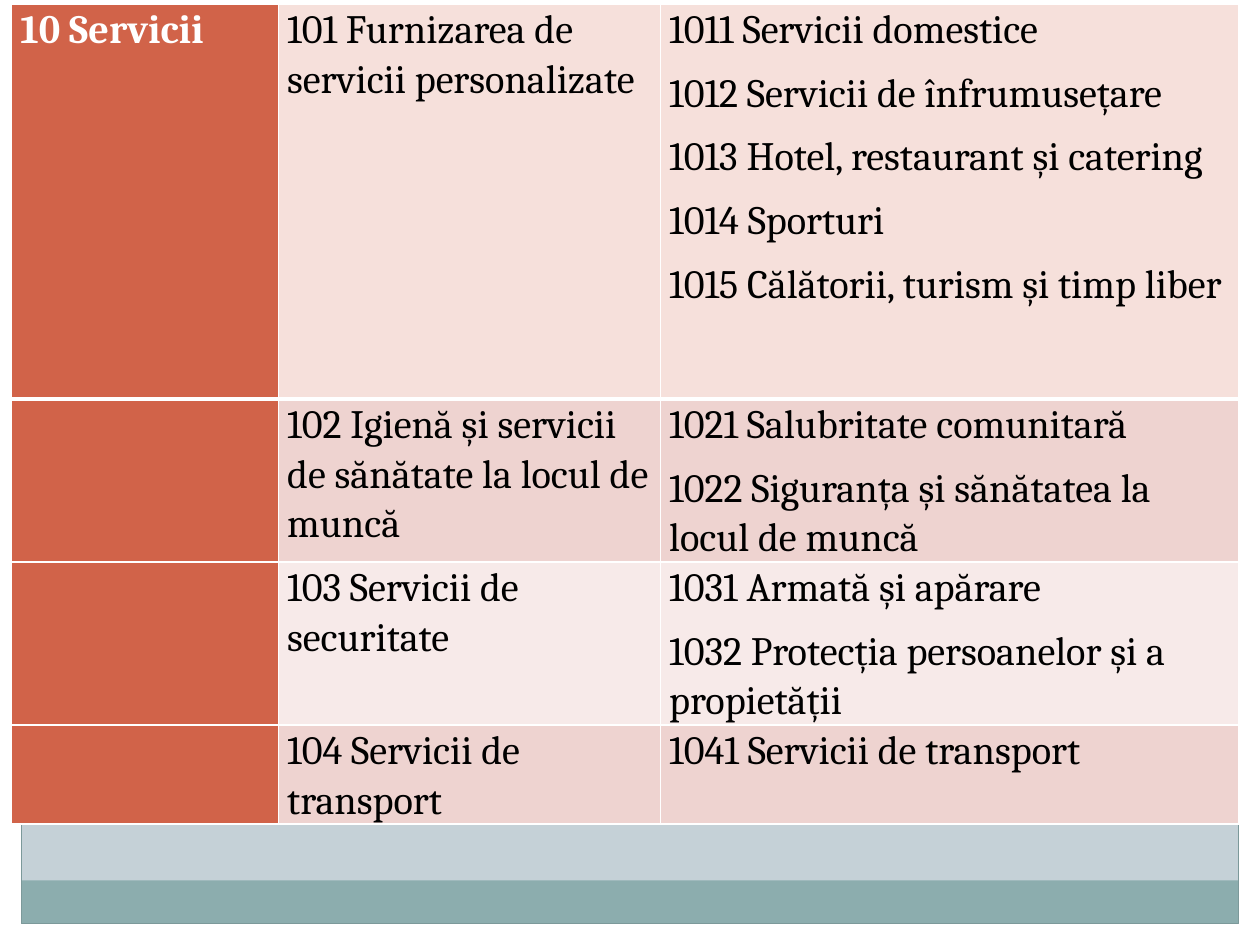
from lxml.etree import SubElement
from pptx import Presentation
from pptx.dml.color import RGBColor
from pptx.enum.shapes import MSO_SHAPE as Shape
from pptx.oxml.ns import qn
from pptx.util import Cm, Pt

COLORS = {
    "background": "C5D1D7", "white": "FFFFFF", "black": "000000",
    "teal": "8CADAE", "frame": "7C999A", "orange": "D16349",
    "peach": "F6E0DB", "rose": "EED3D0", "blush": "F7EAE9",
}
WIDTH, HEIGHT = 25.4, 19.05
MARGIN = 0.43
COLUMNS = [5.38, 7.7, 11.66]
ROWS = [
    (7.96, "peach", "10 Servicii", ["101 Furnizarea de servicii personalizate"],
     ["1011 Servicii domestice", "1012 Servicii de înfrumusețare",
      "1013 Hotel, restaurant și catering", "1014 Sporturi",
      "1015 Călătorii, turism și timp liber"]),
    (3.28, "rose", "", ["102 Igienă și servicii de sănătate la locul de muncă"],
     ["1021 Salubritate comunitară", "1022 Siguranța și sănătatea la locul de muncă"]),
    (3.28, "blush", "", ["103 Servicii de securitate"],
     ["1031 Armată și apărare", "1032 Protecția persoanelor și a propietății"]),
    (2, "rose", "", ["104 Servicii de transport"], ["1041 Servicii de transport"]),
]


def color(name):
    """Return the named colour."""
    return RGBColor.from_string(COLORS[name])


def add_rectangle(page, box, fill=None, line=None):
    """Draw a plain rectangle in a box given in centimetres."""
    shape = page.shapes.add_shape(Shape.RECTANGLE, *map(Cm, box))
    shape.shadow.inherit = False
    if fill:
        shape.fill.solid()
        shape.fill.fore_color.rgb = color(fill)
    else:
        shape.fill.background()
    if line:
        shape.line.color.rgb = color(line)
        shape.line.width = Pt(0.75)
    else:
        shape.line.fill.background()


def add_backdrop(page, box):
    """Draw the white margins, the footer band and the thin frame."""
    left, top, width, height = box
    right, bottom = left + width - MARGIN, top + height - MARGIN
    inner_width, inner_height = width - 2 * MARGIN, height - 2 * MARGIN
    for margin in [(left, bottom, width, MARGIN), (left, top, width, 3.86),
                   (left, top, MARGIN, height), (right, top, MARGIN, height)]:
        add_rectangle(page, margin, "white")
    add_rectangle(page, (left + MARGIN, bottom - 0.87, inner_width, 0.87), "teal")
    add_rectangle(page, (left + MARGIN, top + MARGIN, inner_width, inner_height),
                  line="frame")


def set_borders(cell, bottom_width):
    """Give a cell white borders with the chosen bottom width."""
    properties = cell._tc.get_or_add_tcPr()
    for side, width in (("L", 1), ("R", 1), ("T", 1), ("B", bottom_width)):
        line = SubElement(properties, qn(f"a:ln{side}"), w=str(Pt(width)))
        fill = SubElement(line, qn("a:solidFill"))
        SubElement(fill, qn("a:srgbClr"), val=COLORS["white"])


def fill_cell(cell, lines, fill, ink, bold, bottom_width):
    """Write the lines into a cell and style it."""
    set_borders(cell, bottom_width)
    cell.fill.solid()
    cell.fill.fore_color.rgb = color(fill)
    cell.margin_left = cell.margin_right = Cm(0.18)
    cell.margin_top = cell.margin_bottom = 0
    cell.text = "\n".join(lines)
    for para in cell.text_frame.paragraphs:
        para.line_spacing = 1.07
        para.space_after = Pt(8)
        para.font.size = Pt(23)
        for span in para.runs:
            span.font.name = "Cambria"
            span.font.size = Pt(23)
            span.font.bold = bold
            span.font.color.rgb = color(ink)


def add_services_table(page, box):
    """Place the table of services in the given box."""
    table = page.shapes.add_table(len(ROWS), len(COLUMNS), *map(Cm, box)).table
    for column, width in zip(table.columns, COLUMNS):
        column.width = Cm(width)
    for index, (height, fill, domain, group, fields) in enumerate(ROWS):
        row = table.rows[index]
        row.height = Cm(height)
        bottom_width = 3 if index == 0 else 1
        fill_cell(row.cells[0], [domain], "orange", "white", True, bottom_width)
        for cell, lines in zip(list(row.cells)[1:], (group, fields)):
            fill_cell(cell, lines, fill, "black", False, bottom_width)


def main():
    """Build the deck and save it."""
    deck = Presentation()
    deck.slide_width, deck.slide_height = Cm(WIDTH), Cm(HEIGHT)
    page = deck.slides.add_slide(deck.slide_layouts[6])
    page.background.fill.solid()
    page.background.fill.fore_color.rgb = color("background")
    add_backdrop(page, (0, 0, WIDTH, HEIGHT))
    add_services_table(page, (0.23, 0.08, sum(COLUMNS), sum(row[0] for row in ROWS)))
    deck.save("out.pptx")


if __name__ == "__main__":
    main()
